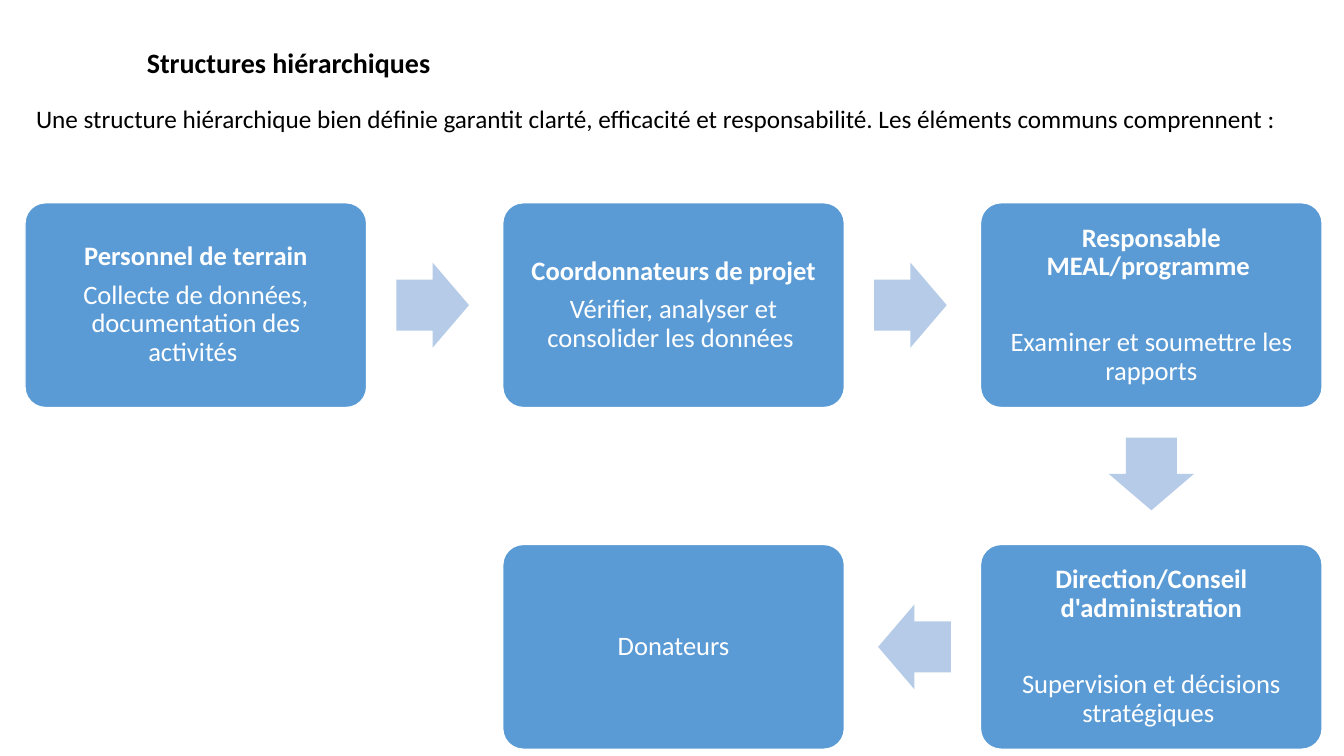
from math import atan2, degrees
from pptx import Presentation
from pptx.dml.color import RGBColor
from pptx.enum.shapes import MSO_SHAPE
from pptx.enum.text import MSO_ANCHOR, PP_ALIGN
from pptx.util import Cm, Pt

ROUNDED, ARROW = MSO_SHAPE.ROUNDED_RECTANGLE, MSO_SHAPE.RIGHT_ARROW
TOP, MIDDLE = MSO_ANCHOR.TOP, MSO_ANCHOR.MIDDLE
LEFT, CENTER = PP_ALIGN.LEFT, PP_ALIGN.CENTER

HEADINGS = [
    ("Une structure hiérarchique bien définie garantit clarté, efficacité et responsabilité. "
     "Les éléments communs comprennent :", (0.66, 2.49, 31.98, 1.02), 18, False),
    ("Structures hiérarchiques", (3.45, 1.02, 10.21, 1.88), 20, True),
]
STEPS = [
    {"cell": (0, 0), "role": "Personnel de terrain",
     "task": "Collecte de données, documentation des activités ", "gap": 6.65},
    {"cell": (1, 0), "role": "Coordonnateurs de projet",
     "task": "Vérifier, analyser et consolider les données ", "gap": 6.65},
    {"cell": (2, 0), "role": "Responsable MEAL/programme ",
     "task": "Examiner et soumettre les rapports", "gap": 33.6},
    {"cell": (2, 1), "role": "Direction/Conseil d'administration",
     "task": "Supervision et décisions stratégiques ", "gap": 33.6},
    {"cell": (1, 1), "task": "Donateurs"},
]
GRID_LEFT, GRID_TOP = 0.63, 5.11
PITCH_X, PITCH_Y = 12.04, 8.61
STEP_WIDTH, STEP_HEIGHT = 8.61, 5.16
ARROW_WIDTH, ARROW_HEIGHT = 1.83, 2.14
ARROW_SETBACK = 0.05
STEP_INSET = 0.36
BLUE, PALE_BLUE, WHITE, BLACK = "5B9BD5", "B5CBE7", "FFFFFF", "000000"


def color(value):
    return RGBColor.from_string(value)


def apply(target, values):
    for name, value in values.items():
        setattr(target, name, value)


def write(para, text, size, bold, shade):
    span = para.add_run()
    span.text = text
    apply(span.font, {"name": "Calibri", "size": Pt(size), "bold": bold})
    span.font.color.rgb = color(shade)


def add_heading(page, text, place, size, bold):
    box = page.shapes.add_textbox(*map(Cm, place))
    apply(box.text_frame, {"word_wrap": True, "vertical_anchor": TOP})
    para = box.text_frame.paragraphs[0]
    para.alignment = LEFT
    write(para, text, size, bold, BLACK)


def add_filled(page, kind, center, width, height, fill, adjustments):
    x, y = center
    shape = page.shapes.add_shape(kind, Cm(x - width / 2), Cm(y - height / 2),
                                  Cm(width), Cm(height))
    shape.shadow.inherit = False
    shape.fill.solid()
    shape.fill.fore_color.rgb = color(fill)
    for index, value in enumerate(adjustments):
        shape.adjustments[index] = value
    return shape


def step_center(step):
    column, row = step["cell"]
    return (GRID_LEFT + column * PITCH_X + STEP_WIDTH / 2,
            GRID_TOP + row * PITCH_Y + STEP_HEIGHT / 2)


def add_step(page, step):
    box = add_filled(page, ROUNDED, step_center(step), STEP_WIDTH, STEP_HEIGHT, BLUE, [0.1])
    box.line.color.rgb = color(WHITE)
    box.line.width = Pt(1)
    frame = box.text_frame
    apply(frame, {"word_wrap": True, "vertical_anchor": MIDDLE})
    apply(frame, {f"margin_{side}": Cm(STEP_INSET) for side in ("left", "right", "top", "bottom")})
    para = frame.paragraphs[0]
    if "role" in step:
        apply(para, {"alignment": CENTER, "line_spacing": 0.9, "space_after": Pt(step["gap"])})
        write(para, step["role"], 19, True, WHITE)
        para = frame.add_paragraph()
    apply(para, {"alignment": CENTER, "line_spacing": 0.9})
    write(para, step["task"], 19, False, WHITE)


def add_arrow(page, start, end):
    (x1, y1), (x2, y2) = step_center(start), step_center(end)
    distance = abs(x2 - x1) + abs(y2 - y1)
    share = 0.5 - ARROW_SETBACK / distance
    center = (x1 + (x2 - x1) * share, y1 + (y2 - y1) * share)
    arrow = add_filled(page, ARROW, center, ARROW_WIDTH, ARROW_HEIGHT, PALE_BLUE, [0.6, 0.5])
    arrow.line.fill.background()
    arrow.rotation = degrees(atan2(y2 - y1, x2 - x1))


def main():
    deck = Presentation()
    apply(deck, {"slide_width": Cm(33.87), "slide_height": Cm(19.05)})
    page = deck.slides.add_slide(deck.slide_layouts[6])
    for heading in HEADINGS:
        add_heading(page, *heading)
    for step in STEPS:
        add_step(page, step)
    for start, end in zip(STEPS, STEPS[1:]):
        add_arrow(page, start, end)
    deck.save("out.pptx")


if __name__ == "__main__":
    main()
